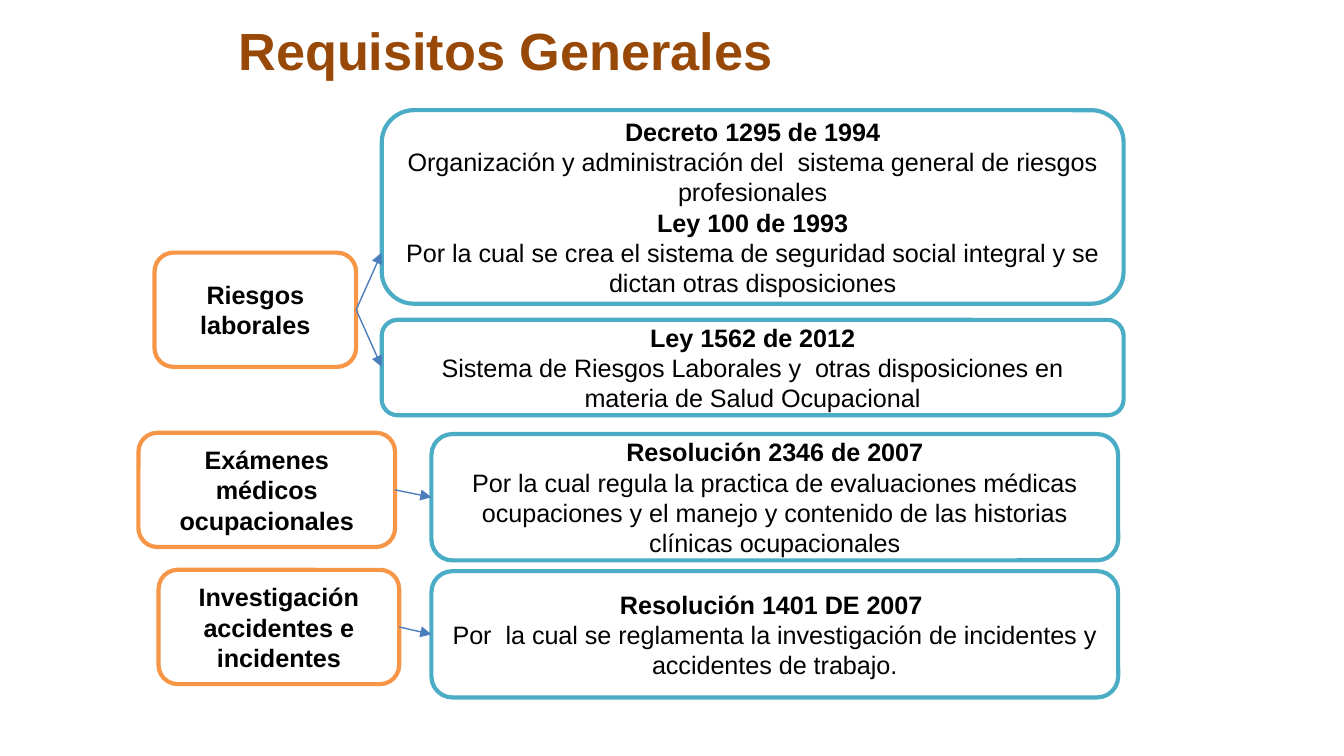
from dataclasses import dataclass

from lxml import etree
from pptx import Presentation
from pptx.dml.color import RGBColor
from pptx.enum.shapes import MSO_CONNECTOR, MSO_SHAPE
from pptx.enum.text import MSO_ANCHOR, MSO_AUTO_SIZE, PP_ALIGN
from pptx.oxml.ns import qn
from pptx.util import Inches, Pt

ROUNDED = MSO_SHAPE.ROUNDED_RECTANGLE
STRAIGHT = MSO_CONNECTOR.STRAIGHT
MIDDLE = MSO_ANCHOR.MIDDLE
GROW = MSO_AUTO_SIZE.SHAPE_TO_FIT_TEXT
CENTER = PP_ALIGN.CENTER


@dataclass(frozen=True)
class Theme:
    font: str = "Arial"
    title: str = "984807"
    text: str = "000000"
    fill: str = "FFFFFF"
    topic: str = "F79646"
    rule: str = "4BACC6"
    arrow: str = "4B7EBC"
    title_size: float = 28
    body_size: float = 13.5
    border: float = 2.25
    arrow_width: float = 0.75


theme = Theme()


def write(paragraph, text, *, size=theme.body_size, color=theme.text, bold=False):
    paragraph.alignment = CENTER
    span = paragraph.add_run()
    span.text = text
    span.font.name = theme.font
    span.font.size = Pt(size)
    span.font.bold = bold
    span.font.color.rgb = RGBColor.from_string(color)


def add_box(page, bounds, border, lines):
    """Draw a rounded box; lines holds (text, bold) pairs."""
    box = page.shapes.add_shape(ROUNDED, *map(Inches, bounds))
    box.shadow.inherit = False
    box.fill.solid()
    box.fill.fore_color.rgb = RGBColor.from_string(theme.fill)
    box.line.color.rgb = RGBColor.from_string(border)
    box.line.width = Pt(theme.border)
    frame = box.text_frame
    frame.word_wrap = True
    frame.vertical_anchor = MIDDLE
    for index, (text, bold) in enumerate(lines):
        paragraph = frame.add_paragraph() if index else frame.paragraphs[0]
        write(paragraph, text, bold=bold)


# Page in 16:9
deck = Presentation()
deck.slide_width = Inches(10)
deck.slide_height = Inches(10 * 9 / 16)
page = deck.slides.add_slide(deck.slide_layouts[6])

# Title
title = page.shapes.add_textbox(Inches(1.38), Inches(0.09), Inches(4.76), Inches(0.57))
title.text_frame.word_wrap = True
title.text_frame.auto_size = GROW
write(title.text_frame.paragraphs[0], "Requisitos Generales",
      size=theme.title_size, color=theme.title, bold=True)

# Topics on the left: text, left, top, width
topic_height = 0.85
topics = [
    ("Exámenes médicos ocupacionales", 1.03, 3.22, 1.91),
    ("Investigación accidentes e incidentes", 1.18, 4.24, 1.79),
    ("Riesgos laborales", 1.15, 1.88, 1.5),
]
for text, left, top, width in topics:
    add_box(page, (left, top, width, topic_height), theme.topic, [(text, True)])

# Regulations on the right: bounds, then alternating heading and description
regulations = [
    ((3.21, 3.23, 5.11, 0.94), [
        "Resolución 2346 de 2007",
        "Por la cual regula la practica de evaluaciones médicas ocupaciones "
        "y el manejo y contenido de las historias clínicas ocupacionales"]),
    ((3.21, 4.25, 5.11, 0.94), [
        "Resolución 1401 DE 2007 ",
        "Por  la cual se reglamenta la investigación de incidentes y accidentes de trabajo."]),
    ((2.84, 2.38, 5.52, 0.71), [
        "Ley 1562 de 2012",
        "Sistema de Riesgos Laborales y  otras disposiciones en materia de Salud Ocupacional"]),
    ((2.84, 0.82, 5.52, 1.44), [
        "Decreto 1295 de 1994",
        "Organización y administración del  sistema general de riesgos profesionales",
        "Ley 100 de 1993",
        "Por la cual se crea el sistema de seguridad social integral y se dictan otras disposiciones"]),
]
for bounds, texts in regulations:
    lines = [(text, index % 2 == 0) for index, text in enumerate(texts)]
    add_box(page, bounds, theme.rule, lines)

# Arrows from each topic's right edge: topic index, end x, end y
arrows = [(2, 2.84, 1.88), (2, 2.84, 2.73), (0, 3.21, 3.7), (1, 3.21, 4.72)]
for index, end_x, end_y in arrows:
    _, left, top, width = topics[index]
    start = Inches(left + width), Inches(top + topic_height / 2)
    arrow = page.shapes.add_connector(STRAIGHT, *start, Inches(end_x), Inches(end_y))
    arrow.line.color.rgb = RGBColor.from_string(theme.arrow)
    arrow.line.width = Pt(theme.arrow_width)
    outline = arrow.element.spPr.find(qn("a:ln"))
    etree.SubElement(outline, qn("a:tailEnd"), type="triangle")
    etree.SubElement(arrow.element.spPr, qn("a:effectLst"))

deck.save("out.pptx")
